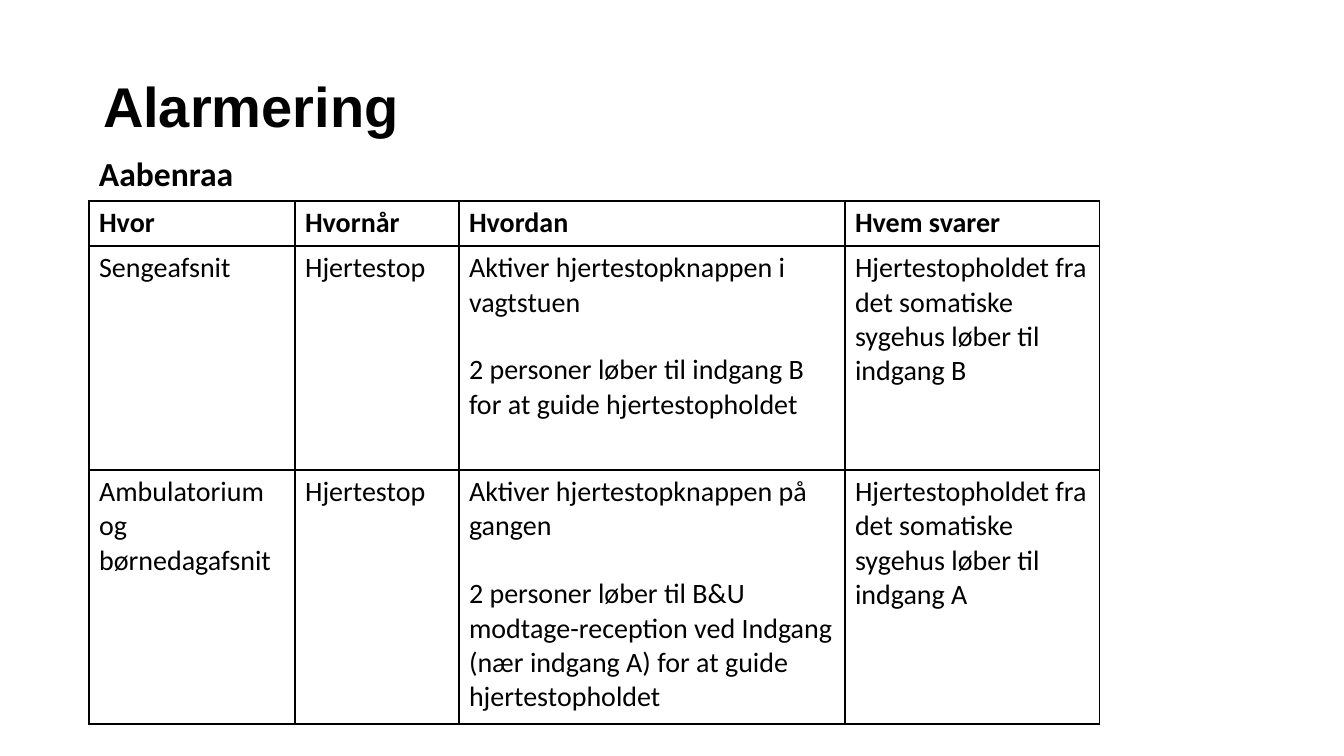
import pptx
import pptx.dml.color
import pptx.enum.text
import pptx.oxml
import pptx.oxml.ns
import pptx.util

PX = 914400 / 100.8
BLACK = "000000"
COLS = [206, 164, 386, 255]
ROWS = [45, 224, 254]
STOP = "Hjertestopholdet fra det somatiske sygehus løber til indgang "
# Each cell is a list of paragraphs.
CELLS = [
    [["Hvor"], ["Hvornår"], ["Hvordan"], ["Hvem svarer"]],
    [["Sengeafsnit"], ["Hjertestop"],
     ["Aktiver hjertestopknappen i vagtstuen",
      "2 personer løber til indgang B for at guide hjertestopholdet"],
     [STOP + "B"]],
    [["Ambulatorium og børnedagafsnit"], ["Hjertestop"],
     ["Aktiver hjertestopknappen på gangen",
      "2 personer løber til B&U modtage-reception ved Indgang "
      "(nær indgang A) for at guide hjertestopholdet"],
     [STOP + "A"]],
]


def px(num):
    return pptx.util.Emu(round(num * PX))


def color(code):
    return pptx.dml.color.RGBColor.from_string(code)


def write(frame, lines, size=20, font="Calibri", bold=False, ink=BLACK,
          gap=0, lead=None):
    """Fill a text frame, one paragraph per line, with gap points between."""
    for i, line in enumerate(lines):
        para = frame.add_paragraph() if i else frame.paragraphs[0]
        para.alignment = pptx.enum.text.PP_ALIGN.LEFT
        if i:
            para.space_before = pptx.util.Pt(gap)
        if lead:
            para.line_spacing = lead
        run = para.add_run()
        run.text = line
        run.font.size = pptx.util.Pt(size)
        run.font.name = font
        run.font.bold = bold
        run.font.color.rgb = color(ink)


def border(cell, ink=BLACK, width=1):
    props = cell._tc.get_or_add_tcPr()
    for side in "LRTB":
        props.append(pptx.oxml.parse_xml(
            f'<a:ln{side} {pptx.oxml.ns.nsdecls("a")} w="{width * 12700}">'
            f'<a:solidFill><a:srgbClr val="{ink}"/></a:solidFill>'
            f'</a:ln{side}>'))


class Page:
    """The slide and its table style."""

    gap = 24

    def __init__(self, deck):
        self.slide = deck.slides.add_slide(deck.slide_layouts[5])

    def title(self, text, left, top, width, height):
        box = self.slide.shapes.title
        box.left, box.top = px(left), px(top)
        box.width, box.height = px(width), px(height)
        frame = box.text_frame
        frame.vertical_anchor = pptx.enum.text.MSO_ANCHOR.MIDDLE
        write(frame, [text], size=40, font="Arial", bold=True, lead=0.9)

    def label(self, text, left, top, width, height):
        box = self.slide.shapes.add_textbox(
            px(left), px(top), px(width), px(height))
        frame = box.text_frame
        frame.word_wrap = False
        frame.auto_size = pptx.enum.text.MSO_AUTO_SIZE.SHAPE_TO_FIT_TEXT
        write(frame, [text], size=24, bold=True)

    def table(self, cells, left, top, cols, rows):
        grid = self.slide.shapes.add_table(
            len(rows), len(cols), px(left), px(top),
            px(sum(cols)), px(sum(rows))).table
        grid.horz_banding = False
        for col, width in zip(grid.columns, cols):
            col.width = px(width)
        for r, height in enumerate(rows):
            grid.rows[r].height = px(height)
            for c, lines in enumerate(cells[r]):
                cell = grid.cell(r, c)
                border(cell)
                cell.fill.background()
                write(cell.text_frame, lines, bold=r == 0, gap=self.gap)


def main():
    deck = pptx.Presentation()
    deck.slide_width, deck.slide_height = px(1344), px(756)
    page = Page(deck)
    page.table(CELLS, 89, 201, COLS, ROWS)
    page.title("Alarmering", 93, 72, 904, 74)
    page.label("Aabenraa", 89, 148, 156, 50)
    deck.save("out.pptx")


if __name__ == "__main__":
    main()
